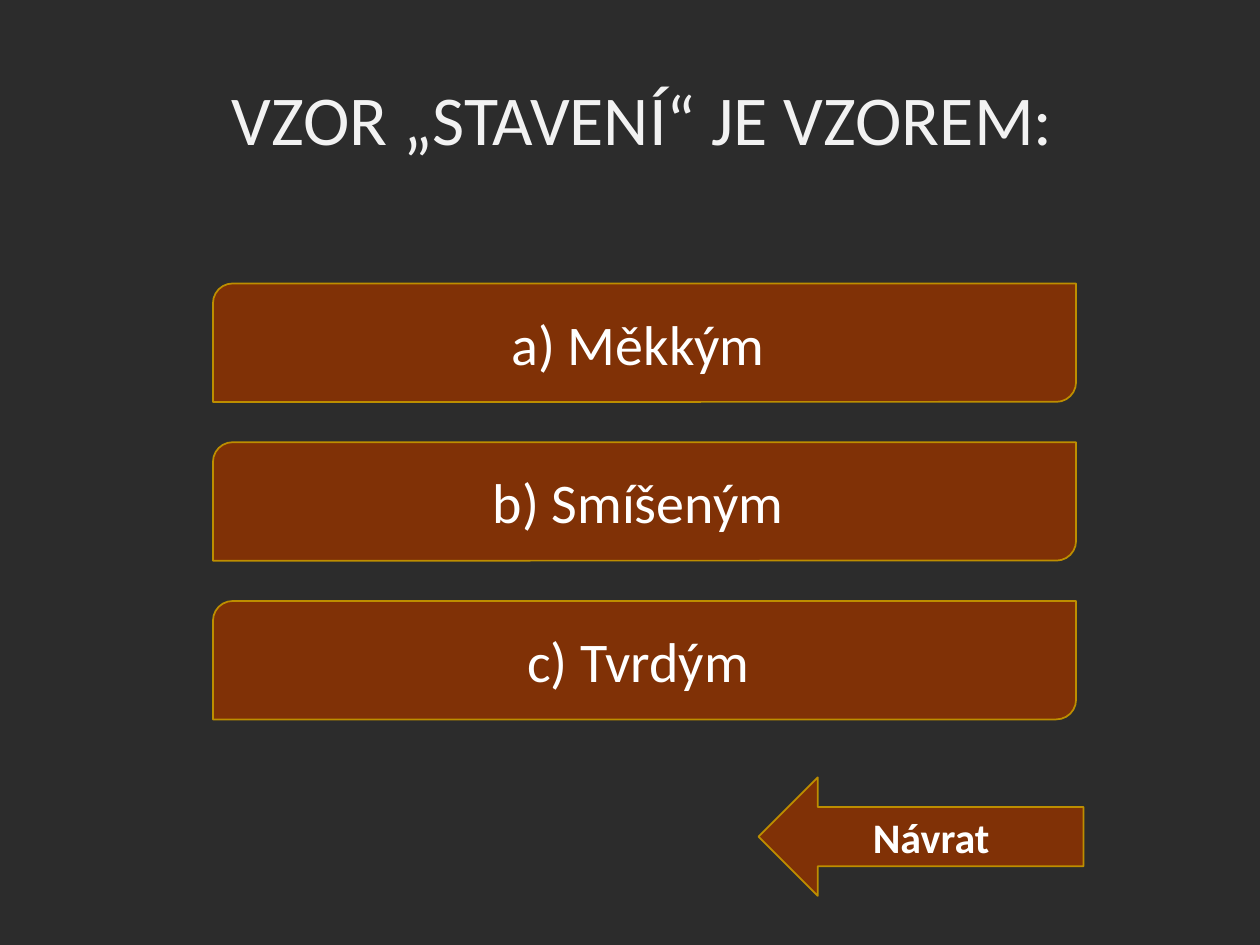
from dataclasses import dataclass

from pptx import Presentation
from pptx.dml.color import RGBColor
from pptx.enum.shapes import MSO_SHAPE
from pptx.enum.text import MSO_ANCHOR, PP_ALIGN
from pptx.util import Inches, Pt

ANSWER_SHAPE = MSO_SHAPE.ROUND_2_DIAG_RECTANGLE
BACK_SHAPE = MSO_SHAPE.LEFT_ARROW
MIDDLE = MSO_ANCHOR.MIDDLE
CENTER = PP_ALIGN.CENTER
TITLE_ONLY_LAYOUT = 5

COLORS = {
    "background": "2C2C2C",
    "title": "F2F2F2",
    "button": "803106",
    "outline": "BD8E00",
    "label": "FFFFFF",
}
FONT = "Calibri"
ANSWERS = ("a) Měkkým ", "b) Smíšeným ", "c) Tvrdým ")
ANSWER_LEFT, ANSWER_TOP, ANSWER_WIDTH = 1.69, 2.25, 6.85
ROW_PITCH = 1.26
BUTTON_HEIGHT = 0.94


@dataclass(frozen=True)
class Button:
    text: str
    preset: MSO_SHAPE
    left: float
    top: float
    width: float
    size: int = 32
    bold: bool = False


def color(name: str) -> RGBColor:
    return RGBColor.from_string(COLORS[name])


def write_text(shape, text: str, *, size: int, color_name: str,
               bold: bool = False, line_spacing: float = 1.0) -> None:
    frame = shape.text_frame
    frame.word_wrap = True
    frame.vertical_anchor = MIDDLE
    paragraph = frame.paragraphs[0]
    paragraph.alignment = CENTER
    paragraph.line_spacing = line_spacing
    run = paragraph.add_run()
    run.text = text
    run.font.name = FONT
    run.font.size = Pt(size)
    run.font.bold = bold
    run.font.color.rgb = color(color_name)


def draw_button(slide, button: Button) -> None:
    shape = slide.shapes.add_shape(
        button.preset, Inches(button.left), Inches(button.top),
        Inches(button.width), Inches(BUTTON_HEIGHT))
    shape.shadow.inherit = False
    shape.fill.solid()
    shape.fill.fore_color.rgb = color("button")
    shape.line.color.rgb = color("outline")
    shape.line.width = Pt(1)
    write_text(shape, button.text, size=button.size, color_name="label",
               bold=button.bold)


def main() -> None:
    presentation = Presentation()
    presentation.slide_width = Inches(10)
    presentation.slide_height = Inches(7.5)
    slide = presentation.slides.add_slide(
        presentation.slide_layouts[TITLE_ONLY_LAYOUT])
    slide.background.fill.solid()
    slide.background.fill.fore_color.rgb = color("background")

    title = slide.shapes.title
    title.left, title.top = Inches(1.06), Inches(0.36)
    title.width, title.height = Inches(8.2), Inches(1.25)
    write_text(title, "VZOR „STAVENÍ“ JE VZOREM: ", size=40,
               color_name="title", line_spacing=0.85)

    for row, answer in enumerate(ANSWERS):
        draw_button(slide, Button(answer, ANSWER_SHAPE, ANSWER_LEFT,
                                  ANSWER_TOP + row * ROW_PITCH, ANSWER_WIDTH))
    draw_button(slide, Button("Návrat ", BACK_SHAPE, 6.02, 6.17, 2.58,
                              size=24, bold=True))

    presentation.save("out.pptx")


if __name__ == "__main__":
    main()
